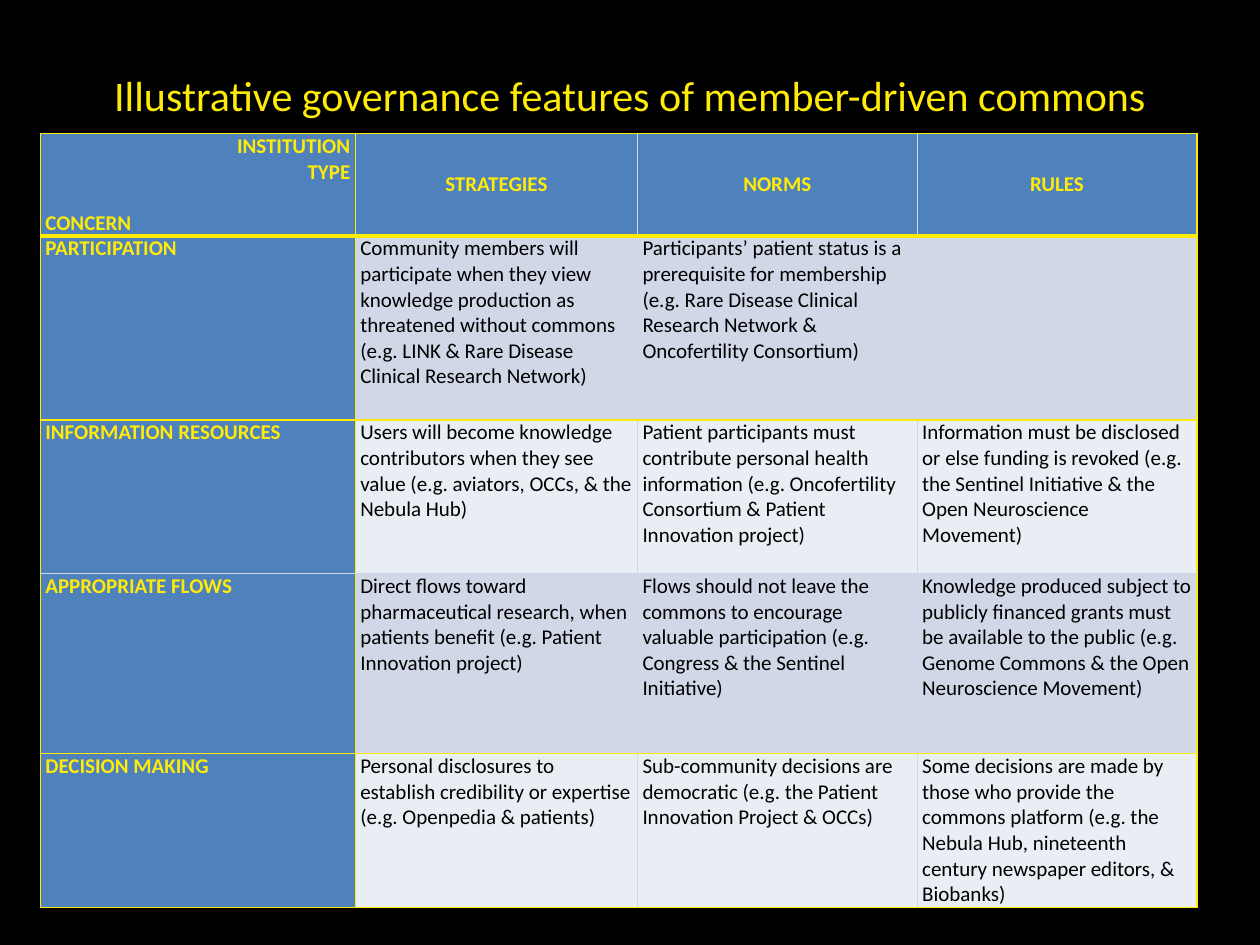
from dataclasses import dataclass

from lxml.etree import SubElement
from pptx import Presentation
from pptx.dml.color import RGBColor as RGB
from pptx.enum.text import MSO_ANCHOR as Anchor, PP_ALIGN as Align
from pptx.oxml.ns import qn
from pptx.util import Inches, Pt


@dataclass(frozen=True)
class Theme:
    back: str = "000000"
    gold: str = "FFEB08"
    head: str = "4F81BD"
    bands: tuple = ("D0D8E8", "E9EDF4")
    ink: str = "000000"
    font: str = "Calibri"
    title: int = 24
    body: int = 12


THEME = Theme()
TITLE = "Illustrative governance features of member-driven commons"
TYPES = ["STRATEGIES", "NORMS", "RULES"]
ROWS = [
    ("PARTICIPATION",
     "Community members will participate when they view knowledge production as "
     "threatened without commons (e.g. LINK & Rare Disease Clinical Research Network)",
     "Participants’ patient status is a prerequisite for membership "
     "(e.g. Rare Disease Clinical Research Network & Oncofertility Consortium)",
     ""),
    ("INFORMATION RESOURCES",
     "Users will become knowledge contributors when they see value "
     "(e.g. aviators, OCCs, & the Nebula Hub)",
     "Patient participants must contribute personal health information "
     "(e.g. Oncofertility Consortium & Patient Innovation project)",
     "Information must be disclosed or else funding is revoked "
     "(e.g. the Sentinel Initiative & the Open Neuroscience Movement)"),
    ("APPROPRIATE FLOWS",
     "Direct flows toward pharmaceutical research, when patients benefit "
     "(e.g. Patient Innovation project)",
     "Flows should not leave the commons to encourage valuable participation "
     "(e.g. Congress & the Sentinel Initiative)",
     "Knowledge produced subject to publicly financed grants must be available to "
     "the public (e.g. Genome Commons & the Open Neuroscience Movement)"),
    ("DECISION MAKING",
     "Personal disclosures to establish credibility or expertise "
     "(e.g. Openpedia & patients)",
     "Sub-community decisions are democratic "
     "(e.g. the Patient Innovation Project & OCCs)",
     "Some decisions are made by those who provide the commons platform (e.g. the "
     "Nebula Hub, nineteenth century newspaper editors, & Biobanks)"),
]
COLS = [2.5, 2.24, 2.22, 2.22]
HIGHS = [0.81, 1.46, 1.22, 1.43, 1.22]
# Line weights in points, for each grid line from left to right and top to bottom
UPS = [1, 1, 0, 0, 1]
ACROSS = [1, 3, 1, 0, 1, 1]


def write(par, text, size, color, bold=False, align=Align.LEFT):
    par.alignment = align
    run = par.add_run()
    run.text = text
    font = run.font
    font.name, font.size, font.bold = THEME.font, Pt(size), bold
    font.color.rgb = RGB.from_string(color)


def rule(cell, row, col):
    """Draw the four edges of a cell; weight 0 means a pale hairline."""
    props = cell._tc.get_or_add_tcPr()
    edges = {"L": UPS[col], "R": UPS[col + 1],
             "T": ACROSS[row], "B": ACROSS[row + 1]}
    for side, weight in edges.items():
        line = SubElement(props, qn(f"a:ln{side}"), w=str(Pt(weight or 0.25)))
        fill = SubElement(line, qn("a:solidFill"))
        color = THEME.gold if weight else THEME.bands[0]
        SubElement(fill, qn("a:srgbClr"), val=color)


def corner(frame):
    """Name both axes in the top left cell."""
    labels = [("INSTITUTION", Align.RIGHT), ("TYPE", Align.RIGHT),
              ("CONCERN", Align.LEFT)]
    for i, (text, align) in enumerate(labels):
        par = frame.add_paragraph() if i else frame.paragraphs[0]
        write(par, text, THEME.body, THEME.gold, True, align)
    par.space_before = Pt(14.6)


def add_title(slide, box):
    title = slide.shapes.title
    title.left, title.top, title.width, title.height = box
    frame = title.text_frame
    frame.word_wrap = True
    frame.vertical_anchor = Anchor.MIDDLE
    write(frame.paragraphs[0], TITLE, THEME.title, THEME.gold, align=Align.CENTER)


def add_grid(slide, box):
    table = slide.shapes.add_table(len(HIGHS), len(COLS), *box).table
    for part, share in zip(table.columns, COLS):
        part.width = int(box[2] * share / sum(COLS))
    for part, share in zip(table.rows, HIGHS):
        part.height = int(box[3] * share / sum(HIGHS))

    for r, texts in enumerate([("", *TYPES), *ROWS]):
        for c, text in enumerate(texts):
            cell = table.cell(r, c)
            rule(cell, r, c)
            label = r == 0 or c == 0
            cell.fill.solid()
            cell.fill.fore_color.rgb = RGB.from_string(
                THEME.head if label else THEME.bands[(r - 1) % 2])
            cell.margin_left = cell.margin_right = Inches(0.04)
            cell.margin_top = cell.margin_bottom = 0
            top = r == 0 and c > 0
            cell.vertical_anchor = Anchor.MIDDLE if top else Anchor.TOP
            if r == c == 0:
                corner(cell.text_frame)
            elif text:
                write(cell.text_frame.paragraphs[0], text, THEME.body,
                      THEME.gold if label else THEME.ink, label,
                      Align.CENTER if top else Align.LEFT)


def main():
    deck = Presentation()
    deck.slide_width, deck.slide_height = Inches(10), Inches(7.5)
    wide, high = deck.slide_width, deck.slide_height
    slide = deck.slides.add_slide(deck.slide_layouts[5])
    back = slide.background.fill
    back.solid()
    back.fore_color.rgb = RGB.from_string(THEME.back)
    add_title(slide, (int(wide * 0.05), int(high * 0.04),
                      int(wide * 0.9), int(high * 0.12)))
    add_grid(slide, (Inches(0.32), Inches(1.06),
                     Inches(sum(COLS)), Inches(sum(HIGHS))))
    deck.save("out.pptx")


if __name__ == "__main__":
    main()
